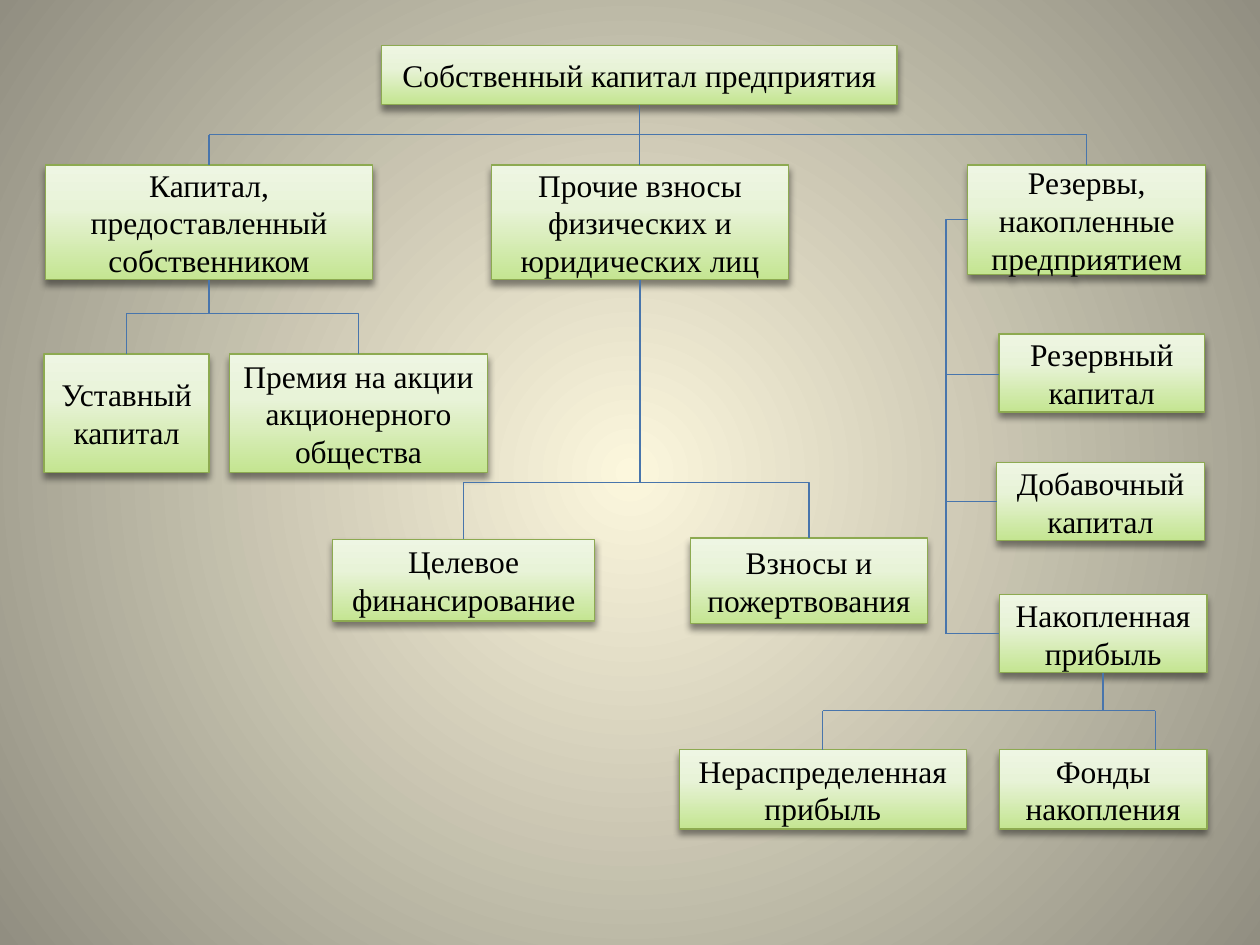
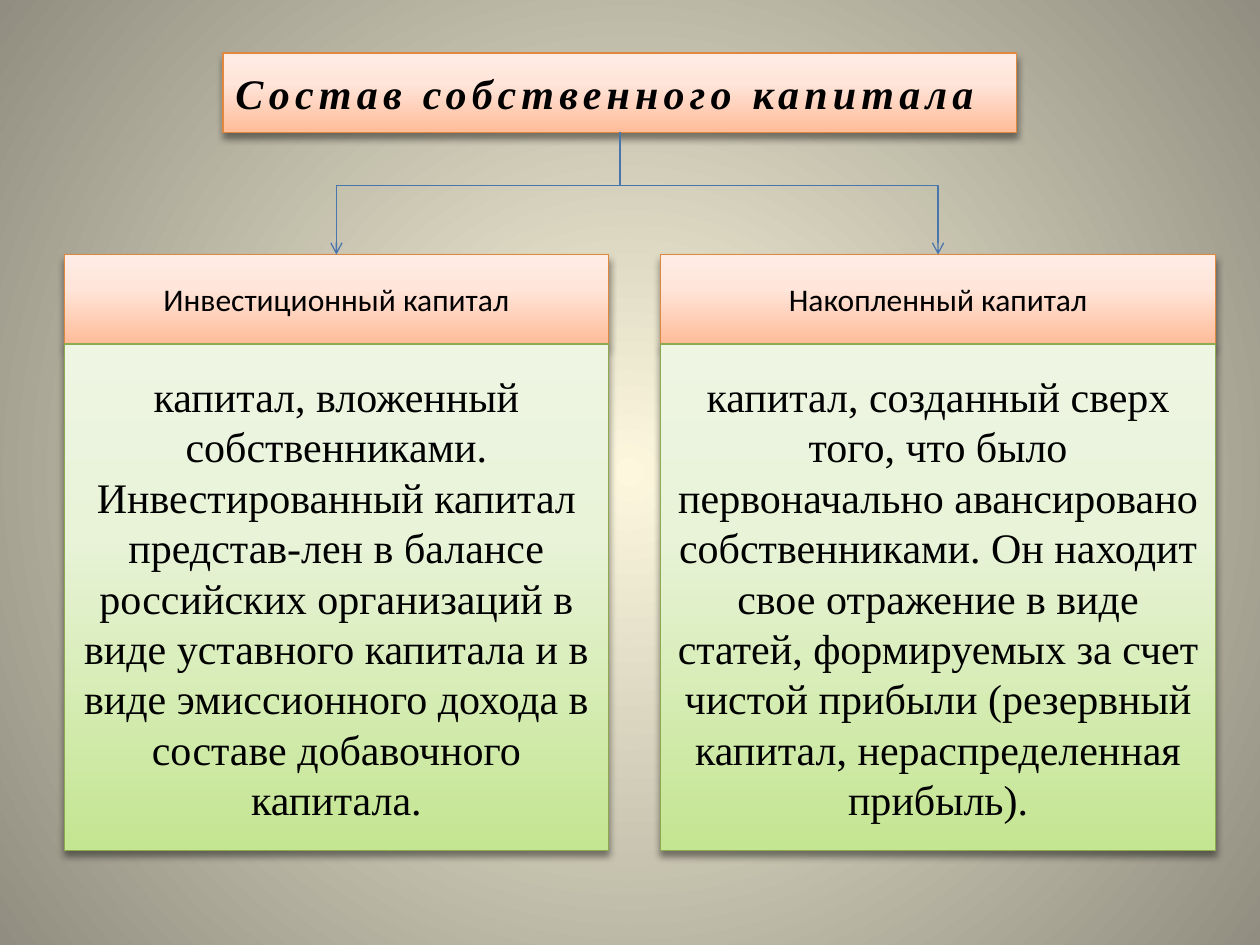
"""Builds two slides on the structure of a company's own capital."""
from dataclasses import dataclass

from lxml.etree import SubElement
from pptx import Presentation
from pptx.dml.color import RGBColor
from pptx.enum.shapes import MSO_CONNECTOR, MSO_SHAPE
from pptx.enum.text import MSO_ANCHOR, PP_ALIGN
from pptx.oxml import parse_xml
from pptx.oxml.ns import nsdecls, qn
from pptx.util import Inches, Pt

COLORS = {
    "text": "000000", "connector": "4875AC", "shadow": "000000",
    "green_line": "8DAA51", "orange_line": "E08840",
}
GRADIENTS = {
    "page": {0: "FCF7DD", 100: "918E81"},
    "green": {0: "C4E591", 62: "E8F3D8", 100: "EEF6E3"},
    "orange": {0: "FFBC99", 62: "FFE5DA", 100: "FFECE5"},
}
UPWARD = '<a:lin ang="16200000" scaled="0"/>'
RADIAL = '<a:path path="circle"><a:fillToRect l="50000" t="50000" r="50000" b="50000"/></a:path>'
SERIF = "Times New Roman"
SANS = "Calibri"


@dataclass
class Box:
    """A rectangle in inches with its connection points."""
    left: float
    top: float
    width: float
    height: float

    @property
    def center(self):
        """Return the horizontal centre."""
        return self.left + self.width / 2

    @property
    def middle(self):
        """Return the vertical centre."""
        return self.top + self.height / 2

    @property
    def bottom(self):
        """Return the lower edge."""
        return self.top + self.height

    @property
    def head(self):
        """Return the centre of the upper edge."""
        return self.center, self.top

    @property
    def foot(self):
        """Return the centre of the lower edge."""
        return self.center, self.bottom


def set_gradient(properties, name, direction):
    """Replace a solid fill by a named gradient."""
    stops = "".join(
        f'<a:gs pos="{place * 1000}"><a:srgbClr val="{color}"/></a:gs>'
        for place, color in GRADIENTS[name].items())
    gradient = parse_xml(
        f'<a:gradFill {nsdecls("a")} rotWithShape="1">'
        f'<a:gsLst>{stops}</a:gsLst>{direction}</a:gradFill>')
    properties.replace(properties.find(qn("a:solidFill")), gradient)


def add_page(deck):
    """Add a blank slide with the radial background."""
    page = deck.slides.add_slide(deck.slide_layouts[6])
    page.background.fill.solid()
    set_gradient(page.element.find(".//" + qn("p:bgPr")), "page", RADIAL)
    return page


def add_shadow(shape):
    """Give a shape a soft shadow below it."""
    shape.shadow.inherit = False
    effects = shape.element.spPr.find(qn("a:effectLst"))
    effects.append(parse_xml(
        f'<a:outerShdw {nsdecls("a")} blurRad="{Pt(4)}" dist="{Pt(3)}" dir="5400000" '
        f'rotWithShape="0"><a:srgbClr val="{COLORS["shadow"]}">'
        '<a:alpha val="43000"/></a:srgbClr></a:outerShdw>'))


def add_card(page, box, label, theme="green", size=18, font=SERIF, align=PP_ALIGN.CENTER):
    """Add a gradient card and return its text run."""
    shape = page.shapes.add_shape(
        MSO_SHAPE.RECTANGLE, Inches(box.left), Inches(box.top),
        Inches(box.width), Inches(box.height))
    shape.fill.solid()
    set_gradient(shape.element.spPr, theme, UPWARD)
    shape.line.color.rgb = RGBColor.from_string(COLORS[theme + "_line"])
    shape.line.width = Pt(0.75)
    add_shadow(shape)
    frame = shape.text_frame
    frame.word_wrap = True
    frame.vertical_anchor = MSO_ANCHOR.MIDDLE
    para = frame.paragraphs[0]
    para.alignment = align
    span = para.add_run()
    span.text = label
    span.font.size = Pt(size)
    span.font.name = font
    span.font.color.rgb = RGBColor.from_string(COLORS["text"])
    return span


def add_line(page, start, end, kind=MSO_CONNECTOR.STRAIGHT):
    """Add a thin connector between two points in inches."""
    line = page.shapes.add_connector(kind, *(Inches(value) for value in (*start, *end)))
    line.line.color.rgb = RGBColor.from_string(COLORS["connector"])
    line.line.width = Pt(0.75)
    SubElement(line.element.spPr, qn("a:effectLst"))
    return line


def add_elbow(page, start, end, arrow=False):
    """Add a connector that runs sideways and then down."""
    elbow = add_line(page, start, end, MSO_CONNECTOR.ELBOW)
    properties = elbow.element.spPr
    properties.find(qn("a:prstGeom")).set("prst", "bentConnector2")
    if arrow:
        SubElement(properties.find(qn("a:ln")), qn("a:tailEnd"), type="arrow")


def add_fork(page, start, level, ends, arrow=False):
    """Join a stem to its branches by elbows at one level."""
    joint = (start[0], level)
    add_line(page, start, joint)
    for end in ends:
        add_elbow(page, joint, end, arrow)


def add_comb(page, start, stem_end, level, ends):
    """Join a stem to its branches by a straight bar."""
    add_line(page, start, (start[0], stem_end))
    add_line(page, (ends[0][0], level), (ends[-1][0], level))
    for end in ends:
        add_line(page, (end[0], level), end)


def add_reserve_rail(page, source, branches, rail):
    """Link the reserves card to the cards stacked below it."""
    levels = [2.97, 3.98, 5.03]
    add_elbow(page, (source.left, 1.74), (rail, levels[-1]))
    for level, branch in zip(levels, branches):
        add_line(page, (rail, level), (branch.left, level))


def build_capital_tree(page):
    """Build the tree of the company's own capital."""
    root = Box(3.03, 0.36, 4.09, 0.47)
    owner = Box(0.36, 1.31, 2.6, 0.91)
    other = Box(3.9, 1.31, 2.36, 0.91)
    reserves = Box(7.68, 1.31, 1.89, 0.87)
    charter = Box(0.35, 2.81, 1.31, 0.94)
    premium = Box(1.82, 2.81, 2.05, 0.94)
    targeted = Box(2.64, 4.28, 2.08, 0.65)
    donations = Box(5.48, 4.27, 1.88, 0.68)
    reserve = Box(7.93, 2.65, 1.63, 0.62)
    additional = Box(7.91, 3.67, 1.65, 0.62)
    profit = Box(7.93, 4.72, 1.65, 0.62)
    retained = Box(5.39, 5.95, 2.28, 0.63)
    funds = Box(7.93, 5.95, 1.65, 0.63)
    for box, label in (
        (root, "Собственный капитал предприятия"),
        (owner, "Капитал, предоставленный собственником"),
        (other, "Прочие взносы физических и юридических лиц"),
        (reserves, "Резервы, накопленные предприятием"),
        (charter, "Уставный капитал"),
        (premium, "Премия на акции акционерного общества"),
        (targeted, "Целевое финансирование"),
        (donations, "Взносы и пожертвования"),
        (reserve, "Резервный капитал"),
        (additional, "Добавочный капитал"),
        (profit, "Накопленная прибыль"),
        (retained, "Нераспределенная прибыль"),
        (funds, "Фонды накопления"),
    ):
        add_card(page, box, label)
    add_comb(page, root.foot, other.top, 1.07, [owner.head, reserves.head])
    add_fork(page, owner.foot, 2.49, [premium.head, charter.head])
    add_fork(page, other.foot, 3.83, [donations.head, targeted.head])
    add_reserve_rail(page, reserves, [reserve, additional, profit], 7.51)
    add_comb(page, profit.foot, 5.64, 5.64, [retained.head, (9.17, funds.top)])


def add_definition(page, box, title, text):
    """Add a heading card with its definition below."""
    heading = Box(box.left, box.top, box.width, 0.71)
    body = Box(box.left, heading.bottom, box.width, box.height - heading.height)
    add_card(page, heading, title, "orange", font=SANS)
    add_card(page, body, text, size=24)


def build_composition(page):
    """Build the title and the two kinds of own capital."""
    title = Box(1.77, 0.42, 6.3, 0.63)
    invested = Box(0.51, 2.02, 4.32, 4.73)
    accumulated = Box(5.24, 2.02, 4.41, 4.73)
    span = add_card(page, title, "Состав собственного капитала", "orange", 24,
                    align=PP_ALIGN.LEFT)
    span.font.bold = True
    span.font.italic = True
    span.font._element.set("spc", "300")
    add_definition(
        page, invested, "Инвестиционный капитал",
        "капитал, вложенный собственниками. Инвестированный капитал представ-лен "
        "в балансе российских организаций в виде уставного капитала и в виде "
        "эмиссионного дохода в составе добавочного капитала.")
    add_definition(
        page, accumulated, "Накопленный капитал",
        "капитал, созданный сверх того, что было первоначально авансировано "
        "собственниками. Он находит свое отражение в виде статей, формируемых за счет "
        "чистой прибыли (резервный капитал, нераспределенная прибыль).")
    add_fork(page, title.foot, 1.47, [accumulated.head, invested.head], arrow=True)


def main():
    """Build and save the deck."""
    deck = Presentation()
    deck.slide_width = Inches(10)
    deck.slide_height = Inches(7.5)
    for build in (build_capital_tree, build_composition):
        build(add_page(deck))
    deck.save("out.pptx")


if __name__ == "__main__":
    main()
